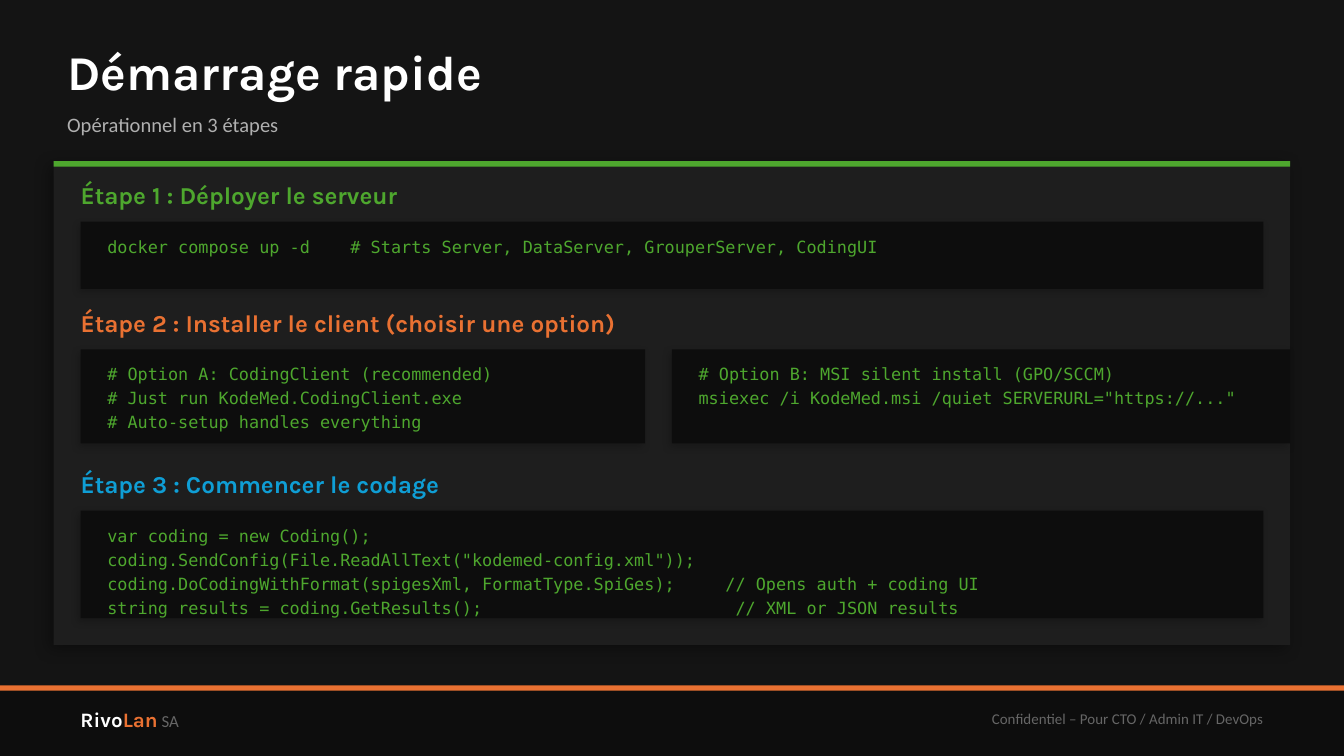
from dataclasses import dataclass
from typing import NamedTuple

from lxml.etree import SubElement
from pptx import Presentation
from pptx.dml.color import RGBColor
from pptx.enum.shapes import MSO_SHAPE
from pptx.enum.text import MSO_ANCHOR, PP_ALIGN
from pptx.oxml.ns import qn
from pptx.util import Emu, Inches, Pt

# Grid of 100 columns; square cells, so the page is 56.25 rows high
WIDTH, HEIGHT = Inches(10), Inches(5.625)
COLUMNS = 100
CELL = WIDTH / COLUMNS
ROWS = HEIGHT / CELL

GREEN, ORANGE, BLUE = "4EA72E", "E97132", "0F9ED5"
BLACK, WHITE, GREY = "0D0D0D", "FFFFFF", "666666"
HEADING, BODY, CODE = "Karla", "Calibri", "DejaVu Sans Mono"


class Area(NamedTuple):
    column: float
    row: float
    columns: float
    rows: float

    def lengths(self) -> list[Emu]:
        return [Emu(round(value * CELL)) for value in self]

    def inset(self, across: float, down: float) -> "Area":
        return Area(self.column + across, self.row + down,
                    self.columns - 2 * across, self.rows - 2 * down)


class Style(NamedTuple):
    font: str
    size: float
    colour: str
    bold: bool = False


class Shadow(NamedTuple):
    opacity: int
    blur: int
    distance: int


class Snippet(NamedTuple):
    column: float
    columns: float
    lines: list[str]


@dataclass
class Step:
    title: str
    colour: str
    row: float
    code_rows: float
    snippets: list[Snippet]


PANEL_SHADOW = Shadow(35, 8, 3)
CODE_SHADOW = Shadow(20, 4, 2)
CODE_STYLE = Style(CODE, 9, GREEN)

STEPS = [
    Step("Étape 1 : Déployer le serveur", GREEN, 13, 5, [
        Snippet(6, 88, [
            "docker compose up -d    # Starts Server, DataServer, GrouperServer, CodingUI",
        ]),
    ]),
    Step("Étape 2 : Installer le client (choisir une option)", ORANGE, 22.5, 7, [
        Snippet(6, 42, [
            "# Option A: CodingClient (recommended)",
            "# Just run KodeMed.CodingClient.exe",
            "# Auto-setup handles everything",
        ]),
        Snippet(50, 46, [
            "# Option B: MSI silent install (GPO/SCCM)",
            'msiexec /i KodeMed.msi /quiet SERVERURL="https://..."',
        ]),
    ]),
    Step("Étape 3 : Commencer le codage", BLUE, 34.5, 8, [
        Snippet(6, 88, [
            "var coding = new Coding();",
            'coding.SendConfig(File.ReadAllText("kodemed-config.xml"));',
            "coding.DoCodingWithFormat(spigesXml, FormatType.SpiGes);     // Opens auth + coding UI",
            "string results = coding.GetResults();                         // XML or JSON results",
        ]),
    ]),
]


def rgb(colour: str) -> RGBColor:
    return RGBColor.from_string(colour)


def apply_style(span, style: Style) -> None:
    span.font.name = style.font
    span.font.size = Pt(style.size)
    span.font.bold = style.bold
    span.font.color.rgb = rgb(style.colour)


def add_shadow(shape, shadow: Shadow) -> None:
    effects = shape._element.spPr.find(qn("a:effectLst"))
    outer = SubElement(effects, qn("a:outerShdw"), blurRad=str(Pt(shadow.blur)),
                       dist=str(Pt(shadow.distance)), dir=str(135 * 60000),
                       algn="bl", rotWithShape="0")
    colour = SubElement(outer, qn("a:srgbClr"), val="000000")
    SubElement(colour, qn("a:alpha"), val=str(shadow.opacity * 1000))


def add_block(page, area: Area, colour: str, shadow: Shadow | None = None) -> None:
    block = page.shapes.add_shape(MSO_SHAPE.RECTANGLE, *area.lengths())
    block.fill.solid()
    block.fill.fore_color.rgb = rgb(colour)
    block.line.fill.background()
    block.shadow.inherit = False
    if shadow:
        add_shadow(block, shadow)


def add_box(page, area: Area, anchor=MSO_ANCHOR.MIDDLE, padded: bool = True):
    frame = page.shapes.add_textbox(*area.lengths()).text_frame
    frame.word_wrap = True
    frame.vertical_anchor = anchor
    if not padded:
        frame.margin_left = frame.margin_right = 0
        frame.margin_top = frame.margin_bottom = 0
    return frame


def add_line(page, area: Area, text: str, style: Style) -> None:
    frame = add_box(page, area, padded=False)
    frame.text = text
    apply_style(frame.paragraphs[0].runs[0], style)


def add_code(page, area: Area, lines: list[str]) -> None:
    add_block(page, area, BLACK, CODE_SHADOW)
    frame = add_box(page, area.inset(1, 0.6), MSO_ANCHOR.TOP)
    frame.text = "\n".join(lines)
    for para in frame.paragraphs:
        para.space_after = Pt(2)
        apply_style(para.runs[0], CODE_STYLE)


def add_step(page, step: Step) -> None:
    add_line(page, Area(6, step.row, 88, 3), step.title,
             Style(HEADING, 13, step.colour, True))
    for snippet in step.snippets:
        area = Area(snippet.column, step.row + 3.5, snippet.columns, step.code_rows)
        add_code(page, area, snippet.lines)


def add_footer(page) -> None:
    top = 51
    add_block(page, Area(0, top, COLUMNS, ROWS - top), BLACK)
    add_block(page, Area(0, top, COLUMNS, 0.4), ORANGE)

    name = add_box(page, Area(5, top + 0.5, 30, 4)).paragraphs[0]
    for text, style in (("Rivo", Style(HEADING, 11, WHITE, True)),
                        ("Lan", Style(HEADING, 11, ORANGE, True)),
                        (" SA", Style(BODY, 9, GREY))):
        span = name.add_run()
        span.text = text
        apply_style(span, style)

    notice = add_box(page, Area(55, top + 0.5, 40, 4)).paragraphs[0]
    notice.text = "Confidentiel – Pour CTO / Admin IT / DevOps"
    notice.alignment = PP_ALIGN.RIGHT
    apply_style(notice.runs[0], Style(BODY, 8, GREY))


def main() -> None:
    deck = Presentation()
    deck.slide_width, deck.slide_height = WIDTH, HEIGHT
    page = deck.slides.add_slide(deck.slide_layouts[6])
    page.background.fill.solid()
    page.background.fill.fore_color.rgb = rgb("141414")

    add_footer(page)

    # Title and subtitle
    add_line(page, Area(5, 2.5, 90, 5.5), "Démarrage rapide",
             Style(HEADING, 26, WHITE, True))
    add_line(page, Area(5, 7.5, 90, 3.5), "Opérationnel en 3 étapes",
             Style(BODY, 11, "B0B0B0"))

    # Panel holding the three steps
    add_block(page, Area(4, 12, 92, 36), "1E1E1E", PANEL_SHADOW)
    add_block(page, Area(4, 12, 92, 0.4), GREEN)
    for step in STEPS:
        add_step(page, step)

    deck.save("out.pptx")


if __name__ == "__main__":
    main()
